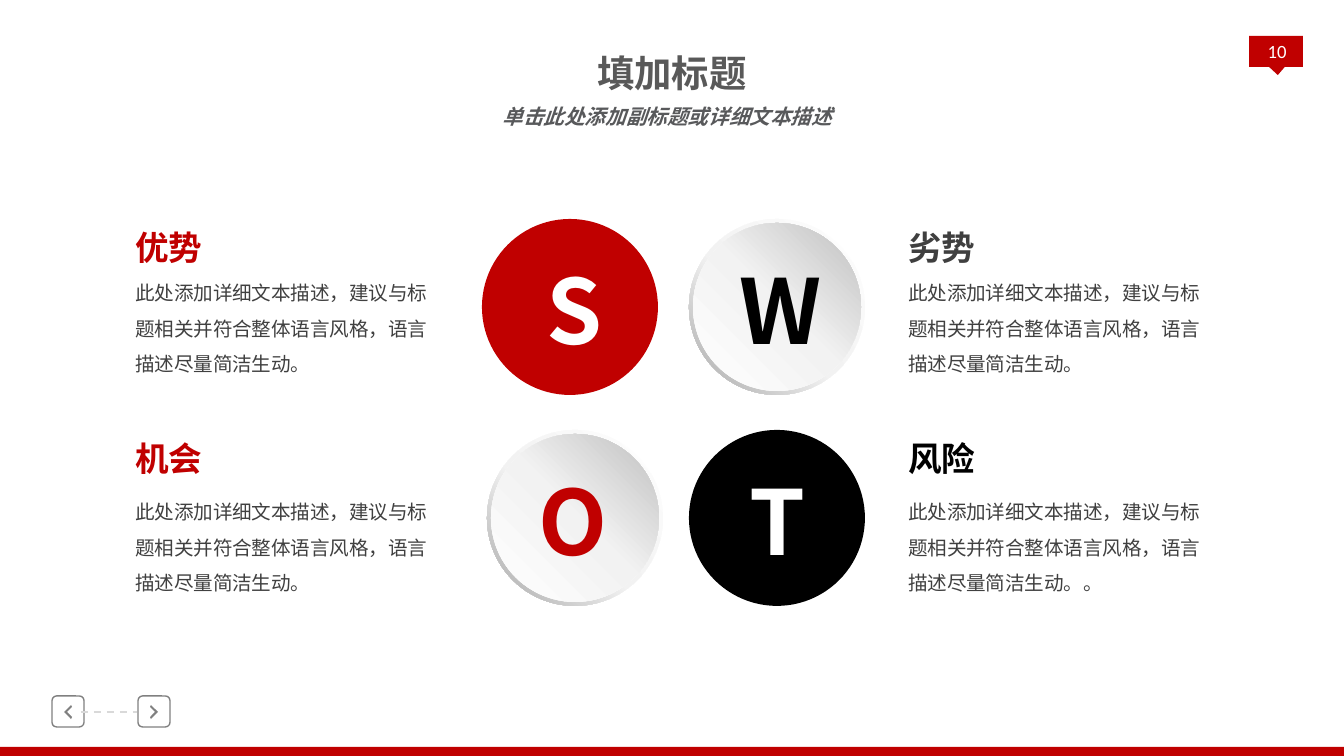
from lxml import etree
from pptx import Presentation
from pptx import util as u
from pptx.dml.color import RGBColor
from pptx.enum import dml, shapes, text
from pptx.oxml.ns import qn

PX = 914400 / 134.4  # EMU in one px
C = {"red": "C00000", "black": "000000", "white": "FFFFFF", "title": "595959",
     "subtitle": "58595B", "body": "404040", "weak": "3F3F3F",
     "icon": "808080", "dash": "D9D9D9"}
RING = (135, [(0, "FFFFFF"), (55, "F2F2F2"), (100, "A6A6A6")])
DISC = (315, [(0, "FFFFFF"), (51, "F2F2F2"), (100, "BFBFBF")])
CJK = "Noto Sans CJK SC"

prs = Presentation()
prs.slide_width, prs.slide_height = round(1344 * PX), round(756 * PX)
s = prs.slides.add_slide(prs.slide_layouts[0])
MSO = shapes.MSO_SHAPE


def add_shape(kind, box, fill):
    """Add a preset shape; fill is a hex string, a (angle, stops) pair or None."""
    sp = s.shapes.add_shape(kind, *[round(v * PX) for v in box])
    sp.shadow.inherit = False
    sp.line.fill.background()
    if fill is None:
        sp.fill.background()
    elif isinstance(fill, str):
        sp.fill.solid()
        sp.fill.fore_color.rgb = RGBColor.from_string(fill)
    else:
        angle, stops = fill
        sp.fill.gradient()
        sp.fill.gradient_angle = 360 - angle
        gs_list = sp._element.spPr.find(qn("a:gradFill")).find(qn("a:gsLst"))
        for gs in list(gs_list):
            gs_list.remove(gs)
        for pos, color in stops:
            gs = etree.SubElement(gs_list, qn("a:gs"), pos=str(pos * 1000))
            etree.SubElement(gs, qn("a:srgbClr"), val=color)
    return sp


def write(box, words, size, color, holder=None, font=CJK, bold=False,
          italic=False, frame=None, para=None):
    """Put one formatted paragraph in a placeholder or a new text box."""
    box = [round(v * PX) for v in box]
    sp = holder or s.shapes.add_textbox(*box)
    sp.left, sp.top, sp.width, sp.height = box
    tf = sp.text_frame
    fmt = {"word_wrap": True, "vertical_anchor": text.MSO_ANCHOR.TOP,
           "auto_size": text.MSO_AUTO_SIZE.NONE}
    for name, value in {**fmt, **(frame or {})}.items():
        setattr(tf, name, value)
    p = tf.paragraphs[0]
    for name, value in {"space_before": u.Pt(0), **(para or {})}.items():
        setattr(p, name, value)
    r = p.add_run()
    r.text = words
    for name, value in {"size": u.Pt(size), "name": font, "bold": bold,
                        "italic": italic}.items():
        setattr(r.font, name, value)
    r.font.color.rgb = RGBColor.from_string(color)
    etree.SubElement(r._r.get_or_add_rPr(), qn("a:ea"), typeface=font)


FLUSH = {f"margin_{side}": 0 for side in ("left", "top", "right", "bottom")}
CENTER = {"alignment": text.PP_ALIGN.CENTER}

# Bottom bar and page number flag
add_shape(MSO.RECTANGLE, (0, 747, 1344, 9), C["red"])
add_shape(MSO.RECTANGLE, (1249, 36, 54, 31), C["red"])
add_shape(MSO.ISOSCELES_TRIANGLE, (1250, 47, 54, 28), C["red"]).rotation = 176.8
write((1252, 29, 50, 51), "10", 10, C["white"], font="Calibri", para=CENTER,
      frame={**FLUSH, "margin_bottom": u.Inches(0.05),
             "vertical_anchor": text.MSO_ANCHOR.MIDDLE})

# Navigation buttons: rounded frame and chevron, mirrored by direction
CHEVRON = [(3, -7), (-4, 0), (3, 7), (4, 5), (-1, 0), (4, -5)]
for left, direction in ((52, 1), (138, -1)):
    frame = add_shape(MSO.ROUNDED_RECTANGLE, (left, 696, 32, 31), None)
    frame.adjustments[0] = 0.15
    frame.line.width = u.Pt(0.75)
    frame.line.color.rgb = RGBColor.from_string(C["icon"])
    points = [(left + 16 + direction * x, 712 + y) for x, y in CHEVRON]
    builder = s.shapes.build_freeform(*points[0], scale=PX)
    builder.add_line_segments(points[1:], close=True)
    sp = builder.convert_to_shape()
    sp.shadow.inherit = False
    sp.fill.solid()
    sp.fill.fore_color.rgb = RGBColor.from_string(C["icon"])
    sp.line.fill.background()

# Dashed link between the buttons
link = s.shapes.add_connector(shapes.MSO_CONNECTOR.STRAIGHT,
                              *[round(v * PX) for v in (81, 712, 137, 712)])
link.line.width = u.Pt(1)
link.line.dash_style = dml.MSO_LINE.DASH
link.line.color.rgb = RGBColor.from_string(C["dash"])
etree.SubElement(link._element.spPr, qn("a:effectLst"))

# Title and subtitle
write((524, 50, 296, 46), "填加标题", 20, C["title"], s.shapes.title, bold=True,
      frame=FLUSH, para=CENTER)
write((488, 97, 359, 39), "单击此处添加副标题或详细文本描述", 11, C["subtitle"],
      s.placeholders[1], bold=True, italic=True,
      frame={"word_wrap": False}, para=CENTER)

# SWOT circles: rim, disc and letter
circles = [
    ("S", 482, 219, 482, C["red"], C["red"], C["white"]),
    ("W", 689, 219, 688, RING, DISC, C["black"]),
    ("O", 487, 430, 481, RING, DISC, C["red"]),
    ("T", 689, 430, 685, C["black"], C["black"], C["white"]),
]
for letter, x, y, letter_x, rim, disc, color in circles:
    add_shape(MSO.DONUT, (x, y, 176, 176), rim).adjustments[0] = 0.05
    add_shape(MSO.OVAL, (x + 4, y + 4, 168, 168), disc)
    write((letter_x, y + 36, 185, 109), letter, 48, color, bold=True,
          frame=FLUSH, para=CENTER)

# Heading and description beside each circle
DESCRIPTION = "此处添加详细文本描述，建议与标题相关并符合整体语言风格，语言描述尽量简洁生动。"
blocks = [
    ("优势", 122, 220, 263, C["red"], ""),
    ("劣势", 895, 220, 263, C["weak"], ""),
    ("机会", 122, 431, 482, C["red"], ""),
    ("风险", 895, 431, 482, C["black"], "。"),
]
for heading, x, heading_y, body_y, color, ending in blocks:
    write((x, heading_y, 284, 54), heading, 18, color, bold=True)
    write((x, body_y, 336, 121), DESCRIPTION + ending, 10.5, C["body"],
          para={"line_spacing": 1.5})

prs.save("out.pptx")
